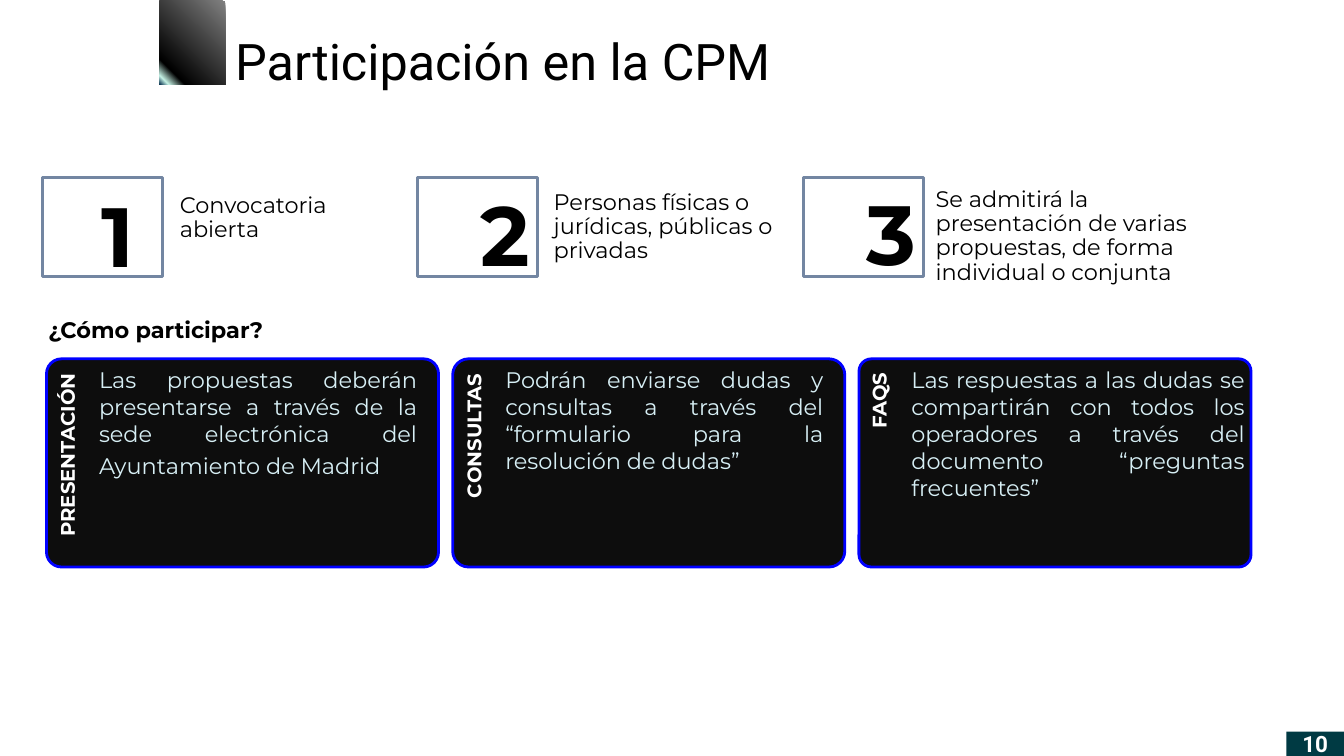
from lxml import etree
from pptx import Presentation
from pptx import util as u
from pptx.dml import color
from pptx.enum import shapes, text
from pptx.oxml import ns

WIDTH, HEIGHT = u.Inches(13.3), u.Inches(7.48)
COLUMN, ROW = WIDTH / 133, HEIGHT / 74.8
DEFAULT_INSETS = (1, 0.5, 1, 0.5)
STEP_INSETS = (0.8, 0.2, 0.4, 0.2)
CARD_LEFT, CARD_PITCH = 4.6, 40.2
CARD_WIDTH, CARD_HEIGHT = 38.8, 20.6

STEPS = [
    ("1", 4.2, (9.1, 17.7, 5.3), (17, 19, 22.6), "Convocatoria abierta"),
    ("2", 41.3, (46.6, 17.6, 7), (54, 18.7, 24.3),
     "Personas físicas o jurídicas, públicas o privadas"),
    ("3", 79.5, (84.8, 17.5, 7), (91.8, 18.4, 30.6),
     "Se admitirá la presentación de varias propuestas, de forma individual o conjunta"),
]
CARDS = [
    ("PRESENTACIÓN", 0.072, 31.5,
     [("Las propuestas deberán presentarse a través de la sede electrónica del "
       "Ayuntamiento de Madrid ", 16), (" ", 20)]),
    ("CONSULTAS", 0.076, 31.5,
     [("Podrán enviarse dudas y consultas a través del “formulario para la "
       "resolución de dudas”", 16)]),
    ("FAQS", 0.06, 33,
     [("Las respuestas a las dudas se compartirán con todos los operadores a través "
       "del documento “preguntas frecuentes”", 16)]),
]
GRADIENT = [(0, "808080"), (83, "000000"), (94, "C8F5E8"), (100, "0F3754")]


def rgb(value):
    return color.RGBColor.from_string(value)


def place(left, top, columns, rows):
    return (round(left * COLUMN), round(top * ROW),
            round(columns * COLUMN), round(rows * ROW))


def write(shape, runs, font="Montserrat", ink="000000", bold=False, align="LEFT",
          insets=DEFAULT_INSETS, spacing=None, wrap=True, anchor="TOP"):
    frame = shape.text_frame
    frame.word_wrap = wrap
    frame.vertical_anchor = text.MSO_ANCHOR[anchor]
    left, top, right, bottom = insets
    frame.margin_left, frame.margin_right = round(left * COLUMN), round(right * COLUMN)
    frame.margin_top, frame.margin_bottom = round(top * ROW), round(bottom * ROW)
    paragraph = frame.paragraphs[0]
    paragraph.alignment = text.PP_ALIGN[align]
    if spacing:
        paragraph.line_spacing = spacing
    for words, size in runs:
        run = paragraph.add_run()
        run.text = words
        run.font.name, run.font.size, run.font.bold = font, u.Pt(size), bold
        run.font.color.rgb = rgb(ink)


def add_text(slide, area, runs, **style):
    write(slide.shapes.add_textbox(*place(*area)), runs, **style)


def add_box(slide, area, fill, line=None, kind="RECTANGLE"):
    shape = slide.shapes.add_shape(shapes.MSO_SHAPE[kind], *place(*area))
    shape.shadow.inherit = False
    shape.fill.solid()
    shape.fill.fore_color.rgb = rgb(fill)
    if line:
        shape.line.color.rgb = rgb(line)
        shape.line.width = u.Pt(2)
    else:
        shape.line.fill.background()
    return shape


def add_gradient_block(slide, area):
    shape = add_box(slide, area, "000000")
    shape.fill.gradient()
    shape.fill.gradient_angle = 225
    stops = shape.element.spPr.find(".//" + ns.qn("a:gsLst"))
    for stop in list(stops):
        stops.remove(stop)
    for position, value in GRADIENT:
        stop = etree.SubElement(stops, ns.qn("a:gs"), pos=str(position * 1000))
        etree.SubElement(stop, ns.qn("a:srgbClr"), val=value)


def add_step(slide, number, left, digit, label, words):
    add_box(slide, (left, 17.6, 11.9, 9.8), "FFFFFF", "7386A2")
    add_text(slide, (*digit, 11.1), [(number, 59.8)], bold=True, wrap=False)
    add_text(slide, (*label, 4.4), [(words, 16)], insets=STEP_INSETS, spacing=0.9)


def add_card(slide, index, name, corner, columns, runs):
    left = CARD_LEFT + index * CARD_PITCH
    middle = left + CARD_WIDTH / 2
    card = add_box(slide, (middle - CARD_HEIGHT / 2, 26.4, CARD_HEIGHT, CARD_WIDTH),
                   "0D0D0D", "0000FF", "ROUNDED_RECTANGLE")
    card.rotation = 270
    card.adjustments[0] = corner
    write(card, [(name, 14)], ink="FFFFFF", bold=True, align="RIGHT",
          insets=(0.4, 0.7, 1, 18.8), spacing=0.9)
    add_text(slide, (left + 5.2, 35.5, columns, CARD_HEIGHT), runs, ink="D7EFF5",
             align="JUSTIFY", insets=(0, 0.7, 0, 0))


def main():
    presentation = Presentation()
    presentation.slide_width, presentation.slide_height = WIDTH, HEIGHT
    slide = presentation.slides.add_slide(presentation.slide_layouts[6])
    add_text(slide, (22.3, 2.5, 55.4, 7.1), [("Participación en la CPM", 35.9)],
             font="Roboto", wrap=False)
    for step in STEPS:
        add_step(slide, *step)
    add_text(slide, (3.6, 30.7, 125.1, 5.5), [("¿Cómo participar?", 16)], bold=True,
             align="JUSTIFY", insets=(1.2, 0.6, 1.2, 0.6))
    for index, card in enumerate(CARDS):
        add_card(slide, index, *card)
    add_gradient_block(slide, (15.8, 0.1, 6.5, 8.3))
    page = add_box(slide, (127.3, 72.4, 5.7, 2.4), "003A43")
    write(page, [("10", 16)], font="Roboto", ink="FFFFFF", bold=True, align="CENTER",
          insets=(1.3, 1.3, 1.3, 1.3), anchor="MIDDLE")
    presentation.save("out.pptx")


if __name__ == "__main__":
    main()
